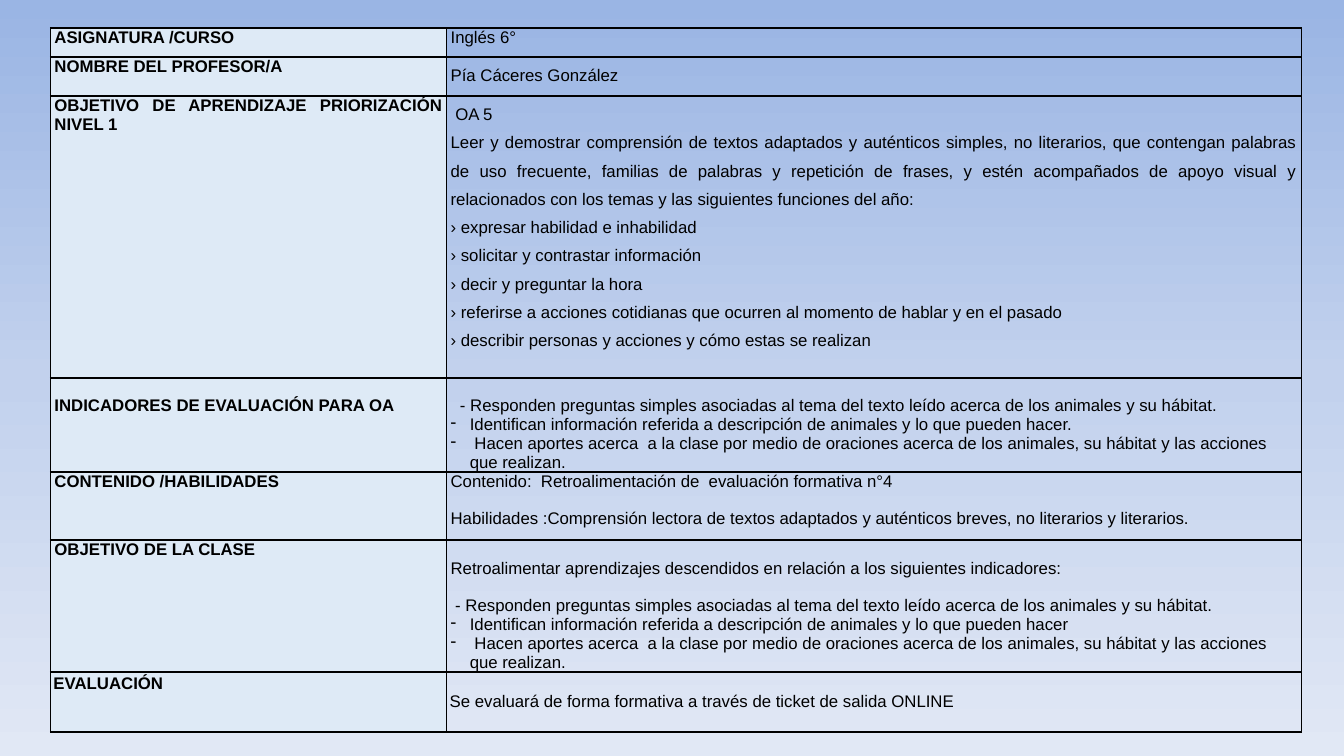
from copy import deepcopy

from lxml.etree import SubElement
from pptx import Presentation
from pptx.dml.color import RGBColor as RGB
from pptx.enum.text import MSO_ANCHOR as Anchor, PP_ALIGN as Align
from pptx.oxml.ns import qn
from pptx.util import Pt

THEME = {
    "font": "Arial",
    "size": Pt(12),
    "text": RGB.from_string("000000"),
    "label": RGB.from_string("DEEAF6"),
    "border": "000000",
    "background": [(0, "9AB5E4"), (0.5, "C2D1ED"), (1, "E1E8F5")],
}
LINE = 13.4

JUSTIFIED = {"alignment": Align.JUSTIFY}
SPACED = {"alignment": Align.JUSTIFY, "line_spacing": 1.5}
LEFT = {"alignment": Align.LEFT}
GAP = {"space_before": Pt(LINE)}

READING = "- Responden preguntas simples asociadas al tema del texto leído acerca de los animales y su hábitat."
ANIMALS = "Identifican información referida a descripción de animales y lo que pueden hacer"
SHARING = " Hacen aportes acerca  a la clase por medio de oraciones acerca de los animales, su hábitat y las acciones que realizan."

ROWS = [
    (20.7, "ASIGNATURA /CURSO", 0, 0, [("Inglés 6°", JUSTIFIED, None)]),
    (27.9, "NOMBRE DEL PROFESOR/A", 0, 0, [("Pía Cáceres González", SPACED, None)]),
    (201.4, "OBJETIVO DE APRENDIZAJE PRIORIZACIÓN NIVEL 1", 0, 0, [
        (text, SPACED, None) for text in (
            " OA 5",
            "Leer y demostrar comprensión de textos adaptados y auténticos simples, no literarios, "
            "que contengan palabras de uso frecuente, familias de palabras y repetición de frases, "
            "y estén acompañados de apoyo visual y relacionados con los temas y las siguientes funciones del año:",
            "› expresar habilidad e inhabilidad",
            "› solicitar y contrastar información",
            "› decir y preguntar la hora",
            "› referirse a acciones cotidianas que ocurren al momento de hablar y en el pasado",
            "› describir personas y acciones y cómo estas se realizan",
        )
    ]),
    (67.1, "INDICADORES DE EVALUACIÓN PARA OA", LINE, LINE, [
        (READING, LEFT, (6.7, 0)),
        (ANIMALS + ".", LEFT, "-"),
        (SHARING, LEFT, "-"),
    ]),
    (48.6, "CONTENIDO /HABILIDADES", 0, 0, [
        ("Contenido:  Retroalimentación de  evaluación formativa n°4", JUSTIFIED, None),
        ("Habilidades :Comprensión lectora de textos adaptados y auténticos breves, "
         "no literarios y literarios.", JUSTIFIED | GAP, None),
    ]),
    (94.3, "OBJETIVO DE LA CLASE", 0, LINE, [
        ("Retroalimentar aprendizajes descendidos en relación a los siguientes indicadores:", LEFT, None),
        (READING, LEFT | GAP, (3.3, 0)),
        (ANIMALS, LEFT, "-"),
        (SHARING, LEFT, "-"),
    ]),
    (42.9, "EVALUACIÓN", 1.4, LINE + 1.4, [
        ("Se evaluará de forma formativa a través de ticket de salida ONLINE", LEFT, None),
    ]),
]


def write_cell(cell, entries, top, side, bold):
    margins = {"margin_left": Pt(side), "margin_right": Pt(side), "margin_top": Pt(top),
               "margin_bottom": Pt(0), "vertical_anchor": Anchor.TOP}
    for name, value in margins.items():
        setattr(cell, name, value)
    frame = cell.text_frame
    for index, (text, layout, marker) in enumerate(entries):
        paragraph = frame.add_paragraph() if index else frame.paragraphs[0]
        for name, value in layout.items():
            setattr(paragraph, name, value)
        if marker:
            margin, indent = (13.7, -13.7) if marker == "-" else marker
            properties = paragraph._p.get_or_add_pPr()
            properties.set("marL", str(Pt(margin)))
            properties.set("indent", str(Pt(indent)))
            if marker == "-":
                SubElement(properties, qn("a:buChar"), char=marker)
        run = paragraph.add_run()
        run.text = text
        for name, value in {"name": THEME["font"], "size": THEME["size"], "bold": bold}.items():
            setattr(run.font, name, value)
        run.font.color.rgb = THEME["text"]


def add_borders(cell):
    properties = cell._tc.get_or_add_tcPr()
    for index, side in enumerate(("a:lnL", "a:lnR", "a:lnT", "a:lnB")):
        line = SubElement(properties, qn(side), w=str(Pt(1)))
        properties.insert(index, line)
        fill = SubElement(line, qn("a:solidFill"))
        SubElement(fill, qn("a:srgbClr"), val=THEME["border"])


presentation = Presentation()
presentation.slide_width = Pt(960)
presentation.slide_height = Pt(540)
slide = presentation.slides.add_slide(presentation.slide_layouts[6])

background = slide.background.fill
background.gradient()
background.gradient_angle = 270
stop_list = slide._element.find(".//" + qn("a:gsLst"))
stop_list.insert(1, deepcopy(stop_list[0]))
for stop, (position, color) in zip(background.gradient_stops, THEME["background"]):
    stop.position = position
    stop.color.rgb = RGB.from_string(color)

height = sum(row[0] for row in ROWS)
table = slide.shapes.add_table(len(ROWS), 2, Pt(36), Pt(20), Pt(893.6), Pt(height)).table
table.first_row = False
table.horz_banding = False
for column, width in zip(table.columns, (283, 610.6)):
    column.width = Pt(width)

for index, (row_height, label, label_top, content_top, content) in enumerate(ROWS):
    table.rows[index].height = Pt(row_height)
    side = 2.2 if label == "EVALUACIÓN" else 2.9
    label_cell, content_cell = table.cell(index, 0), table.cell(index, 1)
    write_cell(label_cell, [(label, JUSTIFIED, None)], label_top, side, True)
    write_cell(content_cell, content, content_top, side, False)
    label_cell.fill.solid()
    label_cell.fill.fore_color.rgb = THEME["label"]
    content_cell.fill.background()
    for cell in (label_cell, content_cell):
        add_borders(cell)

presentation.save("out.pptx")
